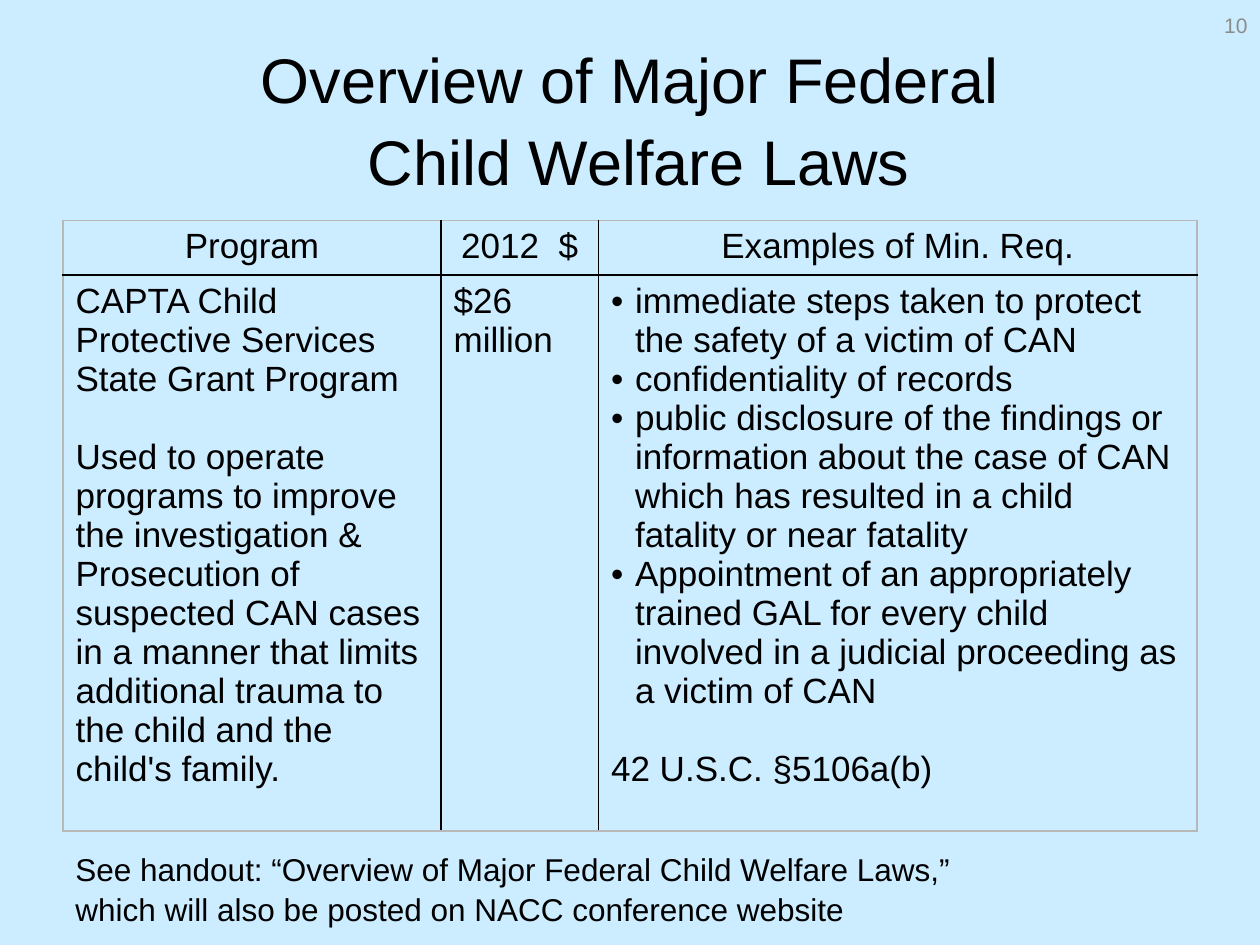
from pptx import Presentation
from pptx.dml.color import RGBColor
from pptx.enum.text import MSO_ANCHOR as Anchor, PP_ALIGN as Align
from pptx.oxml import parse_xml
from pptx.oxml.ns import nsdecls
from pptx.util import Inches, Pt

BLACK, GREY, EDGE, SKY = "000000", "8C8C8C", "B8B8B8", "CCECFF"
HEADERS = ["Program", "2012  $", "Examples of Min. Req."]
PROGRAM = [
    "CAPTA Child Protective Services\vState Grant Program",
    "Used to operate programs to improve the investigation & Prosecution of "
    "suspected CAN cases in a manner that limits additional trauma to the "
    "child and the child's family.",
]
REQUIREMENTS = [
    "immediate steps taken to protect the safety of a victim of CAN",
    "confidentiality of records",
    "public disclosure of the findings or information about the case of CAN "
    "which has resulted in a child fatality or near fatality",
    "Appointment of an appropriately trained GAL for every child involved in "
    "a judicial proceeding as a victim of CAN",
]
CITATION = "42 U.S.C. §5106a(b)"


def rgb(value):
    return RGBColor.from_string(value)


def style_paragraph(p, size, color=BLACK, align=Align.LEFT):
    p.alignment = align
    for r in p.runs:
        r.font.name = "Arial"
        r.font.size = Pt(size)
        r.font.color.rgb = rgb(color)


def add_bullet(p):
    pPr = p._p.get_or_add_pPr()
    pPr.set("marL", str(Inches(0.19)))
    pPr.set("indent", str(-Inches(0.19)))
    pPr.append(parse_xml(f'<a:buFont {nsdecls("a")} typeface="Arial"/>'))
    pPr.append(parse_xml(f'<a:buChar {nsdecls("a")} char="•"/>'))


def add_text(s, box, text, size, color=BLACK, align=Align.LEFT,
             anchor=Anchor.TOP, spacing=1.0):
    tf = s.shapes.add_textbox(*map(Inches, box)).text_frame
    tf.word_wrap = True
    tf.vertical_anchor = anchor
    tf.text = text
    p = tf.paragraphs[0]
    p.line_spacing = spacing
    style_paragraph(p, size, color, align)


def fill_cell(cell, texts, align=Align.LEFT, bullets=0, gap_before=None):
    tf = cell.text_frame
    for i, text in enumerate(texts):
        p = tf.paragraphs[0] if i == 0 else tf.add_paragraph()
        p.text = text
        if i < bullets:
            add_bullet(p)
        if i == gap_before:
            p.space_before = Pt(22.3)
        style_paragraph(p, 20, align=align)


def set_borders(cell, colors):
    cell.fill.background()
    tcPr = cell._tc.get_or_add_tcPr()
    for i, (side, color) in enumerate(zip("LRTB", colors)):
        tcPr.insert(i, parse_xml(
            f'<a:ln{side} {nsdecls("a")} w="{Pt(1)}"><a:solidFill>'
            f'<a:srgbClr val="{color}"/></a:solidFill></a:ln{side}>'))


def add_law_table(s, box):
    table = s.shapes.add_table(2, 3, *map(Inches, box)).table
    table.first_row = table.horz_banding = False
    for column, width in zip(table.columns, (3, 1.25, 4.75)):
        column.width = Inches(width)
    header_height = 0.41
    for row, height in zip(table.rows, (header_height, box[3] - header_height)):
        row.height = Inches(height)

    for i, header in enumerate(HEADERS):
        fill_cell(table.cell(0, i), [header], Align.CENTER)
        left = EDGE if i == 0 else BLACK
        right = EDGE if i == len(HEADERS) - 1 else BLACK
        set_borders(table.cell(0, i), (left, right, EDGE, BLACK))
        set_borders(table.cell(1, i), (left, right, BLACK, EDGE))

    fill_cell(table.cell(1, 0), PROGRAM, gap_before=1)
    fill_cell(table.cell(1, 1), ["$26\vmillion"])
    count = len(REQUIREMENTS)
    fill_cell(table.cell(1, 2), REQUIREMENTS + [CITATION],
              bullets=count, gap_before=count)


def main():
    prs = Presentation()
    prs.slide_width, prs.slide_height = Inches(10), Inches(7.5)
    s = prs.slides.add_slide(prs.slide_layouts[6])
    s.background.fill.solid()
    s.background.fill.fore_color.rgb = rgb(SKY)
    add_text(s, (0.5, 0.3, 9, 1.25),
             "Overview of Major Federal\v Child Welfare Laws",
             36, align=Align.CENTER, anchor=Anchor.MIDDLE, spacing=1.08)
    add_law_table(s, (0.5, 1.75, 9, 4.54))
    add_text(s, (0.5, 6.67, 7.75, 0.71),
             "See handout: “Overview of Major Federal Child Welfare Laws,” "
             "which will also be posted on NACC conference website",
             18, spacing=1.08)
    add_text(s, (7.67, 0, 2.33, 0.4), "10", 12, GREY, Align.RIGHT, Anchor.MIDDLE)
    prs.save("out.pptx")


if __name__ == "__main__":
    main()
